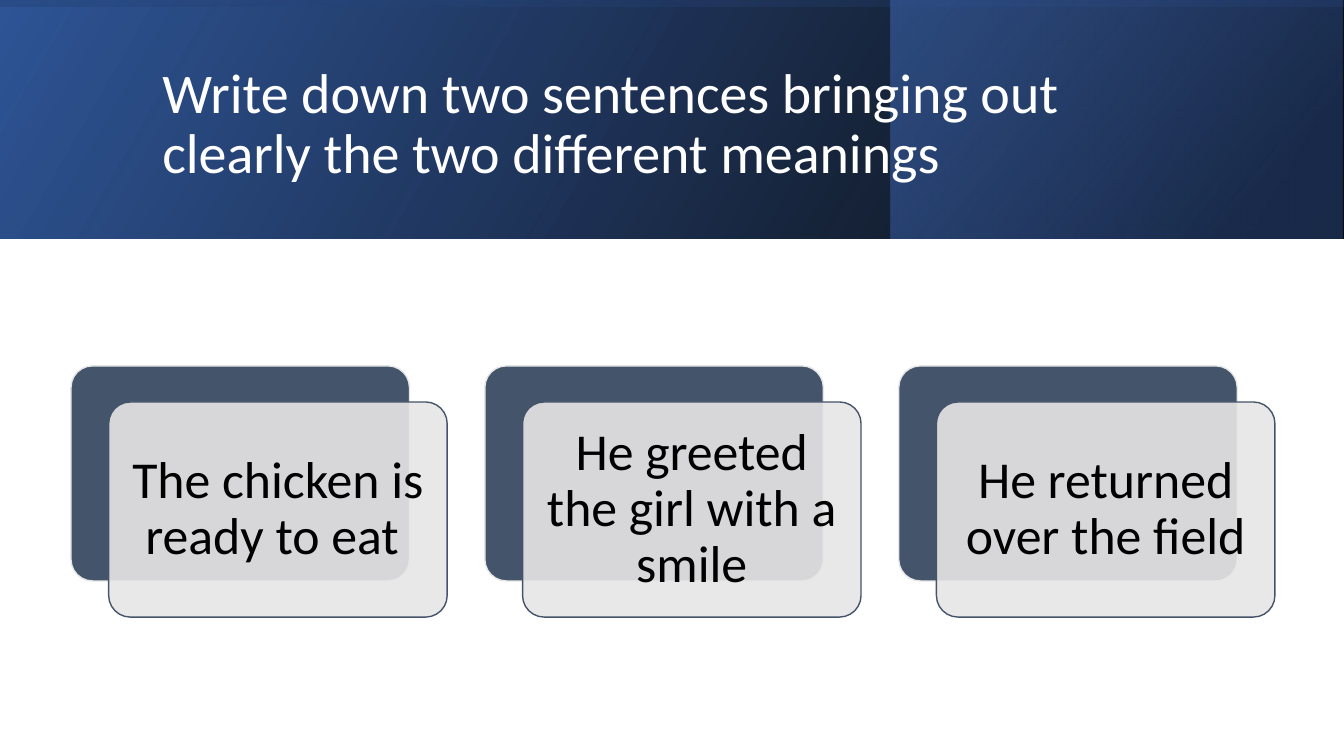
from lxml.etree import SubElement as Sub
from pptx import Presentation
from pptx.dml.color import RGBColor as Rgb
from pptx.enum.shapes import MSO_SHAPE as Kind
from pptx.enum.text import MSO_ANCHOR as Anchor, PP_ALIGN as Align
from pptx.oxml.ns import qn
from pptx.util import Cm, Pt

WIDE, HIGH, BAND = 33.87, 19.05, 6.02
HUES = {
    "black": "000000",
    "white": "FFFFFF",
    "blue": "2F5597",
    "navy": "203864",
    "sky": "4472C4",
    "slate": "44546A",
    "pale": "E7E6E6",
}
CARDS = [
    "The chicken is ready to eat ",
    "He greeted the girl with a smile",
    "He returned over the field",
]


class Board:
    font = "Calibri"

    def __init__(self, slide):
        self.slide = slide

    def hue(self, name):
        return Rgb.from_string(HUES[name])

    def shape(self, kind, left, top, width, height):
        item = self.slide.shapes.add_shape(
            kind, Cm(left), Cm(top), Cm(width), Cm(height))
        item.shadow.inherit = False
        return item

    def fade(self, left, top, width, height, angle, stops, turn=0):
        item = self.shape(Kind.RECTANGLE, left, top, width, height)
        item.rotation = turn
        item.line.fill.background()
        item.fill.background()
        props = item.element.spPr
        props.find(qn("a:xfrm")).set("flipH", "1")
        blank = props.find(qn("a:noFill"))
        grad = Sub(props, qn("a:gradFill"), rotWithShape="1")
        props.replace(blank, grad)
        group = Sub(grad, qn("a:gsLst"))
        for place, name, alpha in stops:
            stop = Sub(group, qn("a:gs"), pos=str(place * 1000))
            tint = Sub(stop, qn("a:srgbClr"), val=HUES[name])
            Sub(tint, qn("a:alpha"), val=str(alpha * 1000))
        Sub(grad, qn("a:lin"), ang=str(angle * 60000), scaled="0")

    def panel(self, left, top, width, height, fill, line, alpha=100):
        item = self.shape(Kind.ROUNDED_RECTANGLE, left, top, width, height)
        item.adjustments[0] = 0.1
        item.fill.solid()
        item.fill.fore_color.rgb = self.hue(fill)
        if alpha < 100:
            tint = item.element.spPr.find(qn("a:solidFill"))[0]
            Sub(tint, qn("a:alpha"), val=str(alpha * 1000))
        item.line.color.rgb = self.hue(line)
        item.line.width = Pt(1)
        return item

    def label(self, item, text, size, color, align):
        frame = item.text_frame
        frame.word_wrap = True
        frame.vertical_anchor = Anchor.MIDDLE
        para = frame.paragraphs[0]
        para.text = text
        para.alignment = align
        para.line_spacing = 0.9
        para.font.name = self.font
        para.font.size = Pt(size)
        para.font.color.rgb = self.hue(color)
        return frame

    def title(self, text, left, top, width, height):
        box = self.slide.shapes.add_textbox(
            Cm(left), Cm(top), Cm(width), Cm(height))
        self.label(box, text, 40, "white", Align.LEFT)

    def card(self, text, left, top, width=8.53, height=5.42):
        self.panel(left, top, width, height, "slate", "pale")
        front = self.panel(left + 0.95, top + 0.91, width, height,
                           "pale", "slate", 90)
        frame = self.label(front, text, 37, "black", Align.CENTER)
        frame.margin_left = frame.margin_right = Cm(0.38)
        frame.margin_top = frame.margin_bottom = Cm(0.38)


def main():
    deck = Presentation()
    deck.slide_width, deck.slide_height = Cm(WIDE), Cm(HIGH)
    board = Board(deck.slides.add_slide(deck.slide_layouts[6]))

    board.fade(0, 0, WIDE, BAND, 330, [(0, "black", 96), (100, "blue", 100)])
    board.fade(22.45, 0, 11.38, BAND, 320,
               [(19, "navy", 68), (100, "sky", 48)])
    shift = (WIDE - BAND) / 2
    board.fade(shift, -shift, BAND, WIDE, 350,
               [(23, "blue", 16), (99, "black", 45)], 270)

    board.title("Write down two sentences bringing out clearly "
                "the two different meanings", 3.84, 0.97, 27, 4.37)
    for spot, text in enumerate(CARDS):
        board.card(text, 1.79 + spot * 10.43, 9.22)
    deck.save("out.pptx")


if __name__ == "__main__":
    main()
